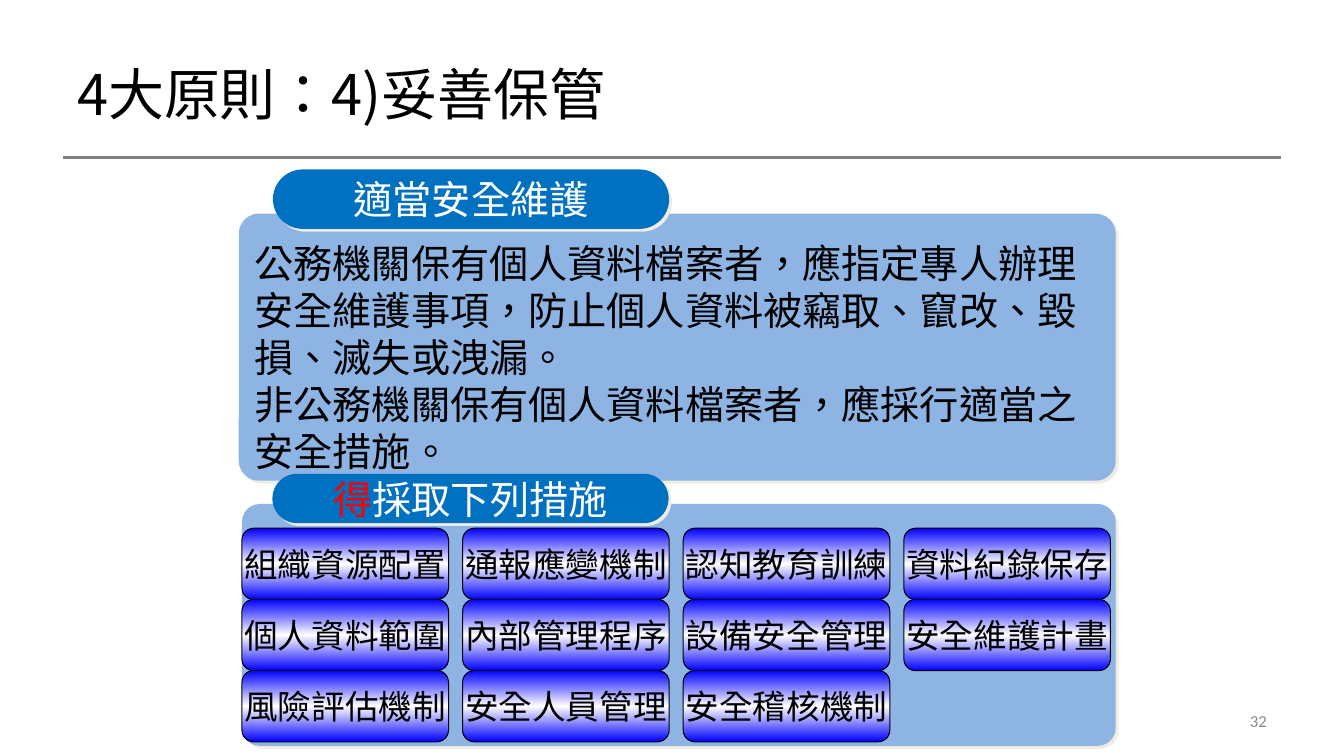
from dataclasses import dataclass
from typing import Any, Optional

from lxml import etree
from pptx import Presentation
from pptx import util as u
from pptx.dml.color import RGBColor
from pptx.enum import shapes as sh, text as tx
from pptx.oxml import parse_xml
from pptx.oxml.ns import qn

NS = 'xmlns:a="http://schemas.openxmlformats.org/drawingml/2006/main"'


@dataclass(frozen=True)
class Theme:
    font: str = "Noto Sans CJK SC"
    latin: str = "Calibri"
    lang: str = "zh-TW"
    ink: str = "000000"
    white: str = "FFFFFF"
    alert: str = "FF0000"
    rule: str = "808080"
    number: str = "8C8C8C"
    panel: str = "8EB4E3"
    label: str = "0070C0"
    cell: str = "0000FF"
    shade: str = "EEECE1"
    title: float = 40
    body: float = 28
    item: float = 24
    small: float = 12


T = Theme()


@dataclass(frozen=True)
class Run:
    text: str
    size: float
    color: str = T.ink
    font: str = T.font


@dataclass(frozen=True)
class Box:
    x: float
    y: float
    w: float
    h: float
    adj: float = 0
    fill: Optional[str] = None  # None draws the gradient cell


def write(shape: Any, paras: list[list[Run]], align: Any, wrap: bool = True,
          anchor: Any = tx.MSO_ANCHOR.MIDDLE, pitch: Optional[float] = None) -> None:
    frame = shape.text_frame
    frame.word_wrap = wrap
    frame.vertical_anchor = anchor
    for i, runs in enumerate(paras):
        para = frame.paragraphs[0] if i == 0 else frame.add_paragraph()
        para.alignment = align
        if pitch:
            para.line_spacing = u.Pt(pitch)
        for run in runs:
            part = para.add_run()
            part.text = run.text
            part.font.size = u.Pt(run.size)
            part.font.name = run.font
            part.font.color.rgb = RGBColor.from_string(run.color)
            # Traditional Chinese centres its punctuation
            props = part.font._element
            props.set("lang", T.lang)
            etree.SubElement(props, qn("a:ea")).set("typeface", run.font)


def frame(pool: Any, box: Box) -> Any:
    return pool.add_textbox(u.Pt(box.x), u.Pt(box.y), u.Pt(box.w), u.Pt(box.h))


def draw(pool: Any, box: Box) -> Any:
    shape = pool.add_shape(sh.MSO_SHAPE.ROUNDED_RECTANGLE,
                           u.Pt(box.x), u.Pt(box.y), u.Pt(box.w), u.Pt(box.h))
    shape.adjustments[0] = box.adj
    shape.shadow.inherit = False
    props = shape._element.spPr
    if box.fill:
        shape.fill.solid()
        shape.fill.fore_color.rgb = RGBColor.from_string(box.fill)
        shape.line.fill.background()
        # Hard shadow towards the lower right
        props.find(qn("a:effectLst")).append(parse_xml(
            f'<a:outerShdw {NS} blurRad="0" dist="{u.Pt(2.8)}" dir="2700000" algn="ctr" '
            f'rotWithShape="0"><a:srgbClr val="{T.shade}"/></a:outerShdw>'))
    else:
        stops = "".join(f'<a:gs pos="{pos}"><a:srgbClr val="{color}"/></a:gs>'
                        for pos, color in ((0, T.cell), (50000, T.white), (100000, T.cell)))
        props.find(qn("a:prstGeom")).addnext(parse_xml(
            f'<a:gradFill {NS} rotWithShape="1"><a:gsLst>{stops}</a:gsLst>'
            f'<a:lin ang="5400000" scaled="1"/></a:gradFill>'))
        shape.line.color.rgb = RGBColor.from_string(T.ink)
        shape.line.width = u.Pt(0.75)
    return shape


def main() -> None:
    deck = Presentation()
    deck.slide_width, deck.slide_height = u.Pt(960), u.Pt(540)
    pool = deck.slides.add_slide(deck.slide_layouts[6]).shapes
    left, mid, right = tx.PP_ALIGN.LEFT, tx.PP_ALIGN.CENTER, tx.PP_ALIGN.RIGHT

    # Heading, rule and page number
    rule = pool.add_connector(sh.MSO_CONNECTOR.STRAIGHT,
                              u.Pt(45), u.Pt(112.5), u.Pt(915), u.Pt(112.5))
    rule.line.color.rgb = RGBColor.from_string(T.rule)
    rule.line.width = u.Pt(2.25)
    etree.SubElement(rule._element.spPr, qn("a:effectLst"))
    write(frame(pool, Box(48, 21.6, 864, 90)), [[Run("4大原則：4)妥善保管", T.title)]], left)
    write(frame(pool, Box(688, 500.4, 224, 28.8)),
          [[Run("32", T.small, T.number, T.latin)]], right)

    # Lower panel
    draw(pool, Box(172.8, 360, 624.2, 172.8, 0.075, T.panel))

    # Upper panel with its label
    duty = pool.add_group_shape().shapes
    panel = draw(duty, Box(170.6, 152.6, 626.4, 190.8, 0.075, T.panel))
    panel.text_frame.margin_top = u.Pt(14)
    write(panel, [
        [Run("公務機關保有個人資料檔案者，應指定專人辦理安全維護事項，"
             "防止個人資料被竊取、竄改、毀損、滅失或洩漏。", T.body)],
        [Run("非公務機關保有個人資料檔案者，應採行適當之安全措施。", T.body)],
    ], left, anchor=tx.MSO_ANCHOR.TOP, pitch=33.6)
    label = draw(duty, Box(195, 121, 283, 42.5, 0.5, T.label))
    write(label, [[Run("適當安全維護", T.body, T.white)]], mid, wrap=False)

    # Lower label
    label = draw(pool, Box(194.6, 338.4, 283, 35.3, 0.5, T.label))
    write(label, [[Run("得", T.body, T.alert), Run("採取下列措施", T.body, T.white)]],
          mid, wrap=False)

    # Grid of measures
    rows = (
        ("組織資源配置", "通報應變機制", "認知教育訓練", "資料紀錄保存"),
        ("個人資料範圍", "內部管理程序", "設備安全管理", "安全維護計畫"),
        ("風險評估機制", "安全人員管理", "安全稽核機制"),
    )
    for r, row in enumerate(rows):
        for c, name in enumerate(row):
            cell = draw(pool, Box(172.8 + 157.6 * c, 377.3 + 50.8 * r, 147.6, 51, 0.167))
            write(cell, [[Run(name, T.item)]], mid, wrap=False)

    deck.save("out.pptx")


if __name__ == "__main__":
    main()
